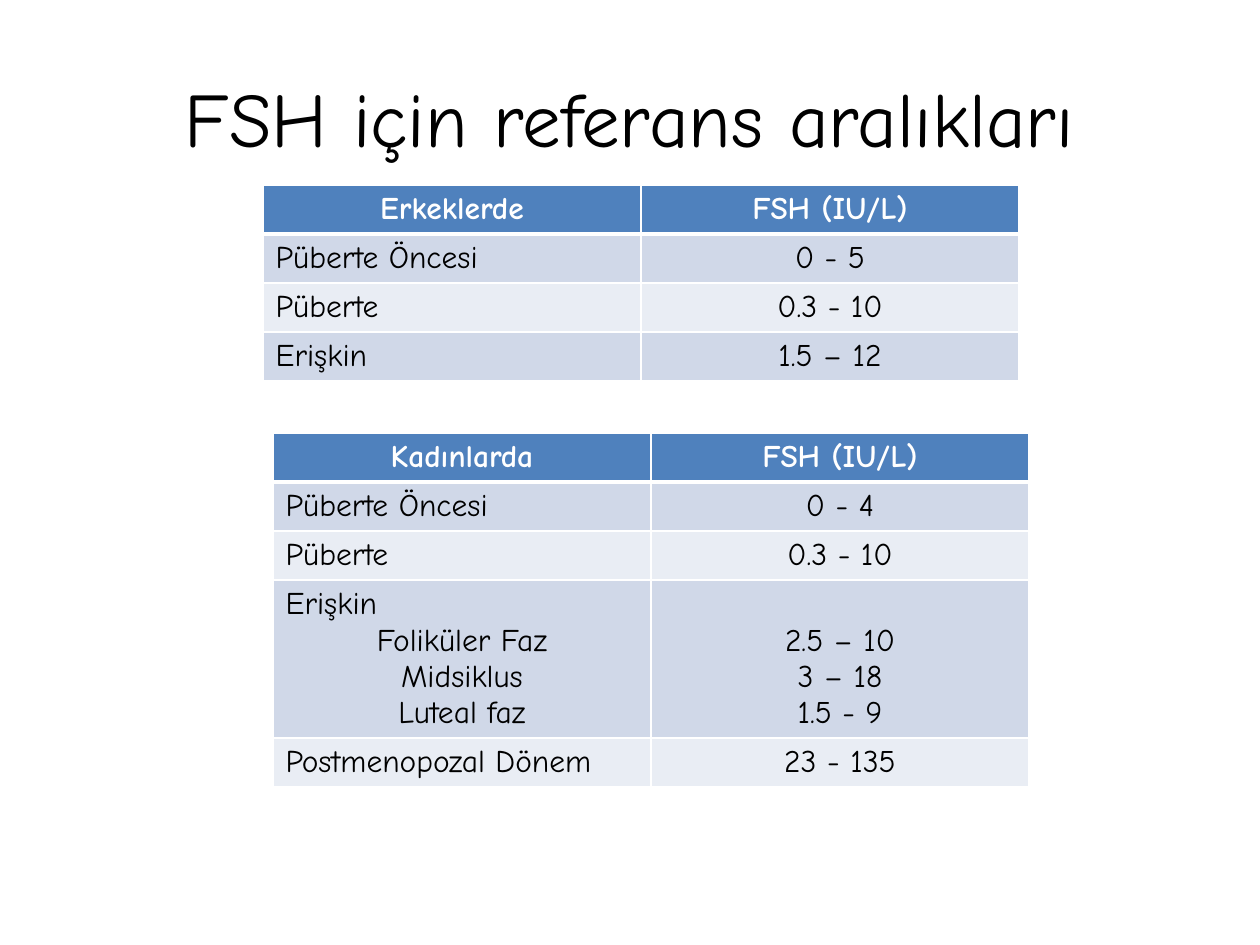
from lxml.etree import SubElement
from pptx import Presentation
from pptx.dml.color import RGBColor
from pptx.enum.text import MSO_ANCHOR as Anchor, PP_ALIGN as Align
from pptx.oxml.ns import qn
from pptx.util import Emu, Pt

TITLE = "FSH için referans aralıkları"
UNIT = "FSH (IU/L)"
TABLES = [
    {"left": 263, "top": 185, "rows": [
        (["Erkeklerde"], [UNIT]),
        (["Püberte Öncesi"], ["0 - 5"]),
        (["Püberte"], ["0.3 - 10"]),
        (["Erişkin"], ["1.5 – 12"]),
    ]},
    {"left": 273, "top": 433, "rows": [
        (["Kadınlarda"], [UNIT]),
        (["Püberte Öncesi"], ["0 - 4"]),
        (["Püberte"], ["0.3 - 10"]),
        (["Erişkin", "Foliküler Faz", "Midsiklus", "Luteal faz"],
         ["2.5 – 10", "3 – 18", "1.5 - 9"]),
        (["Postmenopozal Dönem"], ["23 - 135"]),
    ]},
]

FONT = "Comic Neue"
BLACK = RGBColor(0x00, 0x00, 0x00)
WHITE = RGBColor(0xFF, 0xFF, 0xFF)
HEADER = RGBColor(0x4F, 0x81, 0xBD)
BANDS = [RGBColor(0xE9, 0xED, 0xF4), RGBColor(0xD0, 0xD8, 0xE8)]
COLUMN_WIDTH, ROW_HEIGHT, LINE_HEIGHT = 378, 49, 36


def px(length):
    return Emu(round(length * 914400 / 126))


def write(frame, lines, size=18, color=BLACK, bold=False, first=Align.CENTER):
    for index, line in enumerate(lines):
        para = frame.add_paragraph() if index else frame.paragraphs[0]
        para.alignment = Align.CENTER if index else first
        span = para.add_run()
        span.text = line
        span.font.name = FONT
        span.font.size = Pt(size)
        span.font.bold = bold
        span.font.color.rgb = color


def add_borders(cell, is_header, below_header):
    widths = {"L": 1, "R": 1, "T": 3 if below_header else 1, "B": 3 if is_header else 1}
    properties = cell._tc.get_or_add_tcPr()
    for side, width in widths.items():
        line = SubElement(properties, qn(f"a:ln{side}"), w=str(Pt(width)))
        fill = SubElement(line, qn("a:solidFill"))
        SubElement(fill, qn("a:srgbClr"), val=str(WHITE))


def add_reference_table(page, left, top, rows):
    heights = [ROW_HEIGHT + LINE_HEIGHT * (len(labels) - 1) for labels, _ in rows]
    table = page.shapes.add_table(len(rows), 2, px(left), px(top),
                                  px(2 * COLUMN_WIDTH), px(sum(heights))).table
    for column in table.columns:
        column.width = px(COLUMN_WIDTH)
    for row_index, (row, height) in enumerate(zip(rows, heights)):
        table.rows[row_index].height = px(height)
        is_header = row_index == 0
        for column_index, lines in enumerate(row):
            cell = table.cell(row_index, column_index)
            add_borders(cell, is_header, row_index == 1)
            cell.fill.solid()
            cell.fill.fore_color.rgb = HEADER if is_header else BANDS[row_index % 2]
            if len(lines) < len(row[0]):
                cell.vertical_anchor = Anchor.BOTTOM
            is_label = column_index == 0 and not is_header
            write(cell.text_frame, lines, bold=is_header,
                  color=WHITE if is_header else BLACK,
                  first=Align.LEFT if is_label else Align.CENTER)


def main():
    deck = Presentation()
    deck.slide_width, deck.slide_height = px(1260), px(945)
    page = deck.slides.add_slide(deck.slide_layouts[5])
    title = page.shapes.title
    title.left, title.top, title.width, title.height = map(px, (63, 38, 1134, 158))
    title.text_frame.vertical_anchor = Anchor.MIDDLE
    write(title.text_frame, [TITLE], size=44)
    for table in TABLES:
        add_reference_table(page, **table)
    deck.save("out.pptx")


if __name__ == "__main__":
    main()
